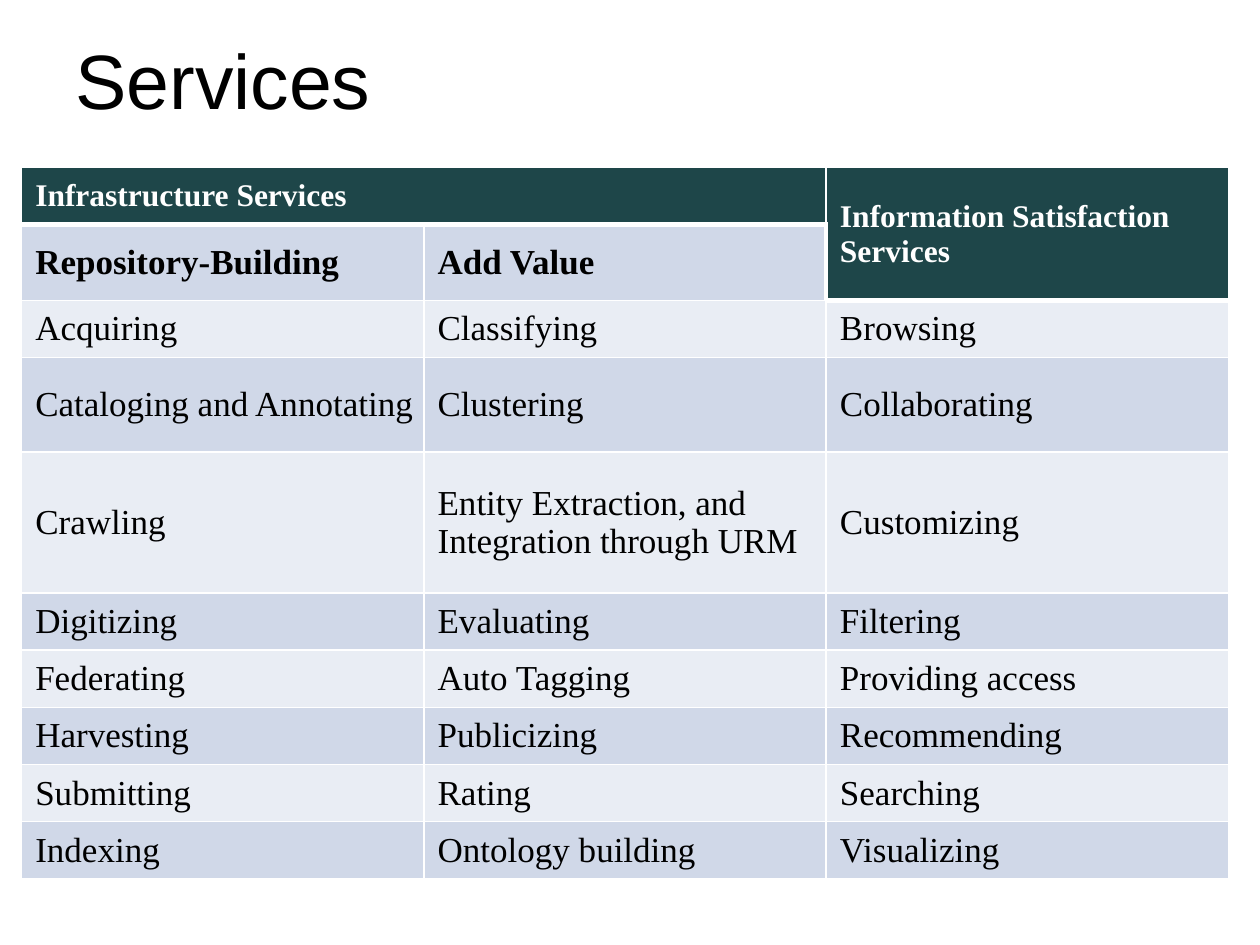
import dataclasses

import pptx
import pptx.dml.color
import pptx.enum.text
import pptx.oxml.ns
import pptx.util
from lxml import etree
from pptx.util import Inches


@dataclasses.dataclass(frozen=True)
class Theme:
    heading_fill: str = "1E4649"
    dark_band: str = "D0D8E8"
    light_band: str = "E9EDF4"
    white: str = "FFFFFF"
    black: str = "000000"
    title_font: str = "Arial"
    table_font: str = "Times New Roman"
    title_size: int = 44
    heading_size: int = 18
    body_size: int = 20
    thin: int = 1
    thick: int = 3


theme = Theme()


def add_text(frame, text, font, size, color, bold=False):
    span = frame.paragraphs[0].add_run()
    span.text = text
    span.font.name = font
    span.font.size = pptx.util.Pt(size)
    span.font.bold = bold
    span.font.color.rgb = pptx.dml.color.RGBColor.from_string(color)


def add_borders(cell, thick_sides):
    properties = cell._tc.get_or_add_tcPr()
    for side in "LRTB":
        width = theme.thick if side in thick_sides else theme.thin
        line = etree.SubElement(properties, pptx.oxml.ns.qn("a:ln" + side),
                                w=str(pptx.util.Pt(width)))
        fill = etree.SubElement(line, pptx.oxml.ns.qn("a:solidFill"))
        etree.SubElement(fill, pptx.oxml.ns.qn("a:srgbClr"), val=theme.white)


deck = pptx.Presentation()
deck.slide_width, deck.slide_height = Inches(10), Inches(7.5)
page = deck.slides.add_slide(deck.slide_layouts[6])

# Title
box = page.shapes.add_textbox(Inches(0.5), Inches(0), Inches(9), Inches(1.25))
box.text_frame.word_wrap = True
box.text_frame.vertical_anchor = pptx.enum.text.MSO_ANCHOR.MIDDLE
add_text(box.text_frame, "Services", theme.title_font, theme.title_size, theme.black)

# Table content: two heading rows, then one service per column
rows = [
    ("Infrastructure Services", "", "Information Satisfaction Services"),
    ("Repository-Building", "Add Value", ""),
    ("Acquiring", "Classifying", "Browsing"),
    ("Cataloging and Annotating", "Clustering", "Collaborating"),
    ("Crawling", "Entity Extraction, and Integration through URM", "Customizing"),
    ("Digitizing", "Evaluating", "Filtering"),
    ("Federating", "Auto Tagging", "Providing access"),
    ("Harvesting", "Publicizing", "Recommending"),
    ("Submitting", "Rating", "Searching"),
    ("Indexing", "Ontology building", "Visualizing"),
]

# Table grid: equal columns, and equal rows apart from two tall ones
table_width, table_height = 9.58, 5.5
tall_rows = {3: 0.75, 4: 1.12}
row_height = (table_height - sum(tall_rows.values())) / (len(rows) - len(tall_rows))
table = page.shapes.add_table(len(rows), 3, Inches(0.17), Inches(1.33),
                              Inches(table_width), Inches(table_height)).table
for column in table.columns:
    column.width = Inches(table_width / 3)
for index, row in enumerate(table.rows):
    row.height = Inches(tall_rows.get(index, row_height))
table.cell(0, 0).merge(table.cell(0, 1))
table.cell(0, 2).merge(table.cell(1, 2))

# Thick rules frame the dark headings
thick_edges = {(0, 0): "B", (0, 1): "B", (0, 2): "B", (1, 0): "T",
               (1, 1): "TR", (1, 2): "LB", (2, 2): "T"}

# Cells
for row_index, texts in enumerate(rows):
    for column_index, text in enumerate(texts):
        cell = table.cell(row_index, column_index)
        is_heading = row_index == 0 or (row_index, column_index) == (1, 2)
        band = theme.dark_band if row_index % 2 else theme.light_band
        add_borders(cell, thick_edges.get((row_index, column_index), ""))
        cell.fill.solid()
        cell.fill.fore_color.rgb = pptx.dml.color.RGBColor.from_string(
            theme.heading_fill if is_heading else band)
        cell.vertical_anchor = pptx.enum.text.MSO_ANCHOR.MIDDLE
        cell.margin_left, cell.margin_right = Inches(0.11), Inches(0.07)
        cell.margin_top = cell.margin_bottom = Inches(0)
        if text:
            add_text(cell.text_frame, text, theme.table_font,
                     theme.heading_size if is_heading else theme.body_size,
                     theme.white if is_heading else theme.black,
                     bold=row_index < 2)

deck.save("out.pptx")
